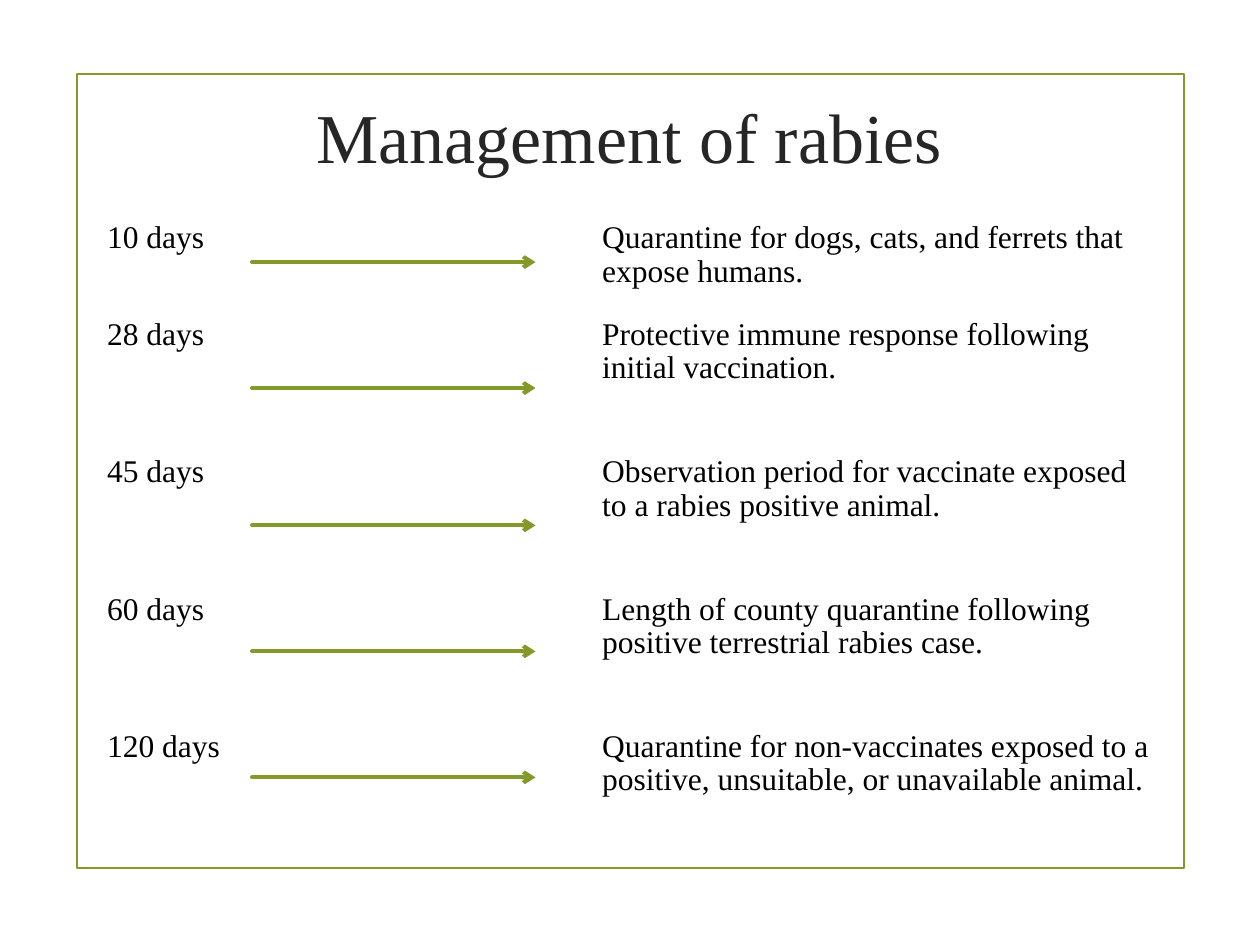
import pptx
import pptx.dml.color
import pptx.enum.shapes
import pptx.enum.text
import pptx.oxml.ns
import pptx.util
from lxml import etree

Inches = pptx.util.Inches
Pt = pptx.util.Pt
RGBColor = pptx.dml.color.RGBColor
qn = pptx.oxml.ns.qn

GREEN = RGBColor(0x83, 0x99, 0x2A)
DARK = RGBColor(0x26, 0x26, 0x26)
BLACK = RGBColor(0, 0, 0)

# Period, what it applies to, height of its arrow on the slide
PERIODS = [
    ("10 days", "Quarantine for dogs, cats, and ferrets that expose humans.", 2.08),
    ("28 days", "Protective immune response following initial vaccination.", 3.08),
    ("45 days", "Observation period for vaccinate exposed to a rabies positive animal.", 4.17),
    ("60 days", "Length of county quarantine following positive terrestrial rabies case.", 5.17),
    ("120 days", "Quarantine for non-vaccinates exposed to a positive, unsuitable, "
                 "or unavailable animal.", 6.17),
]
COLUMN_WIDTHS = [1.31, 2.62, 4.57]
ROW_HEIGHTS = [0.77] + [1.09] * 4


class SlideBuilder:
    font_name = "Times New Roman"

    def __init__(self, slide):
        self.slide = slide

    def format_text(self, text_frame, size, color):
        for paragraph in text_frame.paragraphs:
            for run in paragraph.runs:
                run.font.name = self.font_name
                run.font.size = Pt(size)
                run.font.color.rgb = color

    def title(self, text, left, top, width, height):
        title = self.slide.shapes.title
        title.left, title.top = Inches(left), Inches(top)
        title.width, title.height = Inches(width), Inches(height)
        text_frame = title.text_frame
        text_frame.text = text
        text_frame.vertical_anchor = pptx.enum.text.MSO_ANCHOR.MIDDLE
        text_frame.paragraphs[0].alignment = pptx.enum.text.PP_ALIGN.CENTER
        self.format_text(text_frame, 40, DARK)

    def frame(self, left, top, width, height):
        """Draw an outlined rectangle behind the title."""
        shape = self.slide.shapes.add_shape(
            pptx.enum.shapes.MSO_SHAPE.RECTANGLE,
            Inches(left), Inches(top), Inches(width), Inches(height))
        shape.shadow.inherit = False
        shape.fill.background()
        shape.line.color.rgb = GREEN
        shape.line.width = Pt(1.25)
        self.slide.shapes.title.element.addprevious(shape.element)

    def table(self, rows, left, top, column_widths, row_heights):
        table = self.slide.shapes.add_table(
            len(rows), len(column_widths), Inches(left), Inches(top),
            Inches(sum(column_widths)), Inches(sum(row_heights))).table
        table.first_row = False
        table.horz_banding = False
        for column, width in zip(table.columns, column_widths):
            column.width = Inches(width)
        for row, height, texts in zip(table.rows, row_heights, rows):
            row.height = Inches(height)
            for cell, text in zip(row.cells, texts):
                cell.fill.background()
                cell.text_frame.text = text
                cell.text_frame.paragraphs[0].line_spacing = 0.96
                self.format_text(cell.text_frame, 18, BLACK)

    def arrow(self, start, end, y):
        connector = self.slide.shapes.add_connector(
            pptx.enum.shapes.MSO_CONNECTOR.STRAIGHT,
            Inches(start), Inches(y), Inches(end), Inches(y))
        connector.line.color.rgb = GREEN
        connector.line.width = Pt(2.25)
        properties = connector.element.spPr
        line = properties.find(qn("a:ln"))
        line.set("cap", "rnd")
        etree.SubElement(line, qn("a:tailEnd"), type="arrow")
        etree.SubElement(properties, qn("a:effectLst"))


def main():
    presentation = pptx.Presentation()
    presentation.slide_width = Inches(10)
    presentation.slide_height = Inches(7.5)
    title_only = presentation.slide_layouts[5]
    builder = SlideBuilder(presentation.slides.add_slide(title_only))

    builder.frame(0.61, 0.59, 8.79, 6.3)
    builder.title("Management of rabies", 1.28, 0.61, 7.43, 0.93)
    rows = [(period, "", meaning) for period, meaning, _ in PERIODS]
    builder.table(rows, 0.75, 1.71, COLUMN_WIDTHS, ROW_HEIGHTS)
    for _, _, y in PERIODS:
        builder.arrow(2, 4.25, y)

    presentation.save("out.pptx")


if __name__ == "__main__":
    main()
